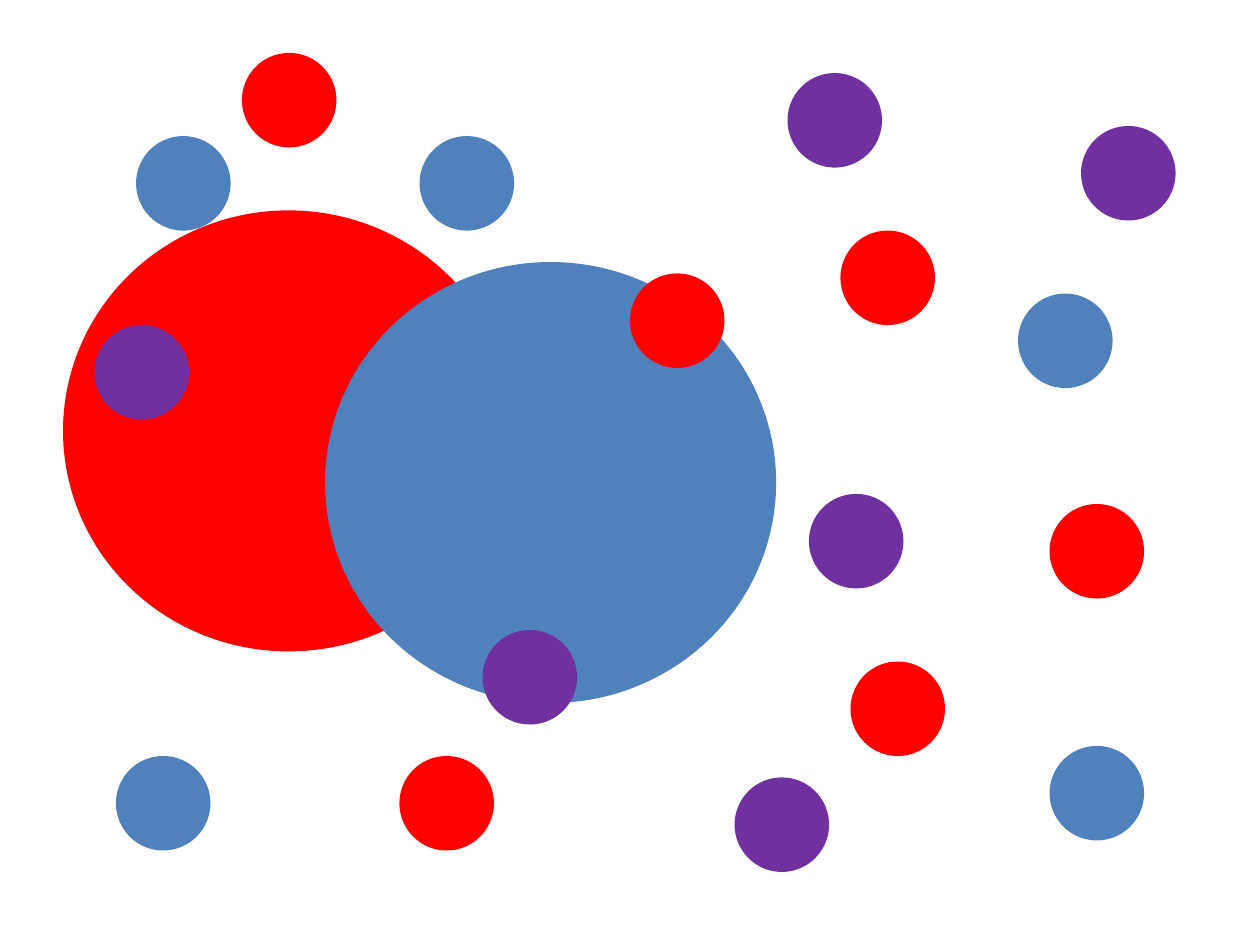
from pptx import Presentation
from pptx.dml.color import RGBColor
from pptx.enum import shapes
from pptx.util import Inches

COLORS = {"red": "FF0000", "blue": "4F81BD", "purple": "7030A0"}

LARGE_WIDTH, LARGE_HEIGHT = 3.58, 3.5
DOT_SIZE = 0.75

LARGE_CIRCLES = [("red", 0.5, 1.67), ("blue", 2.58, 2.08)]

# Colour, left, top; listed from back to front
DOTS = [
    ("blue", 8.33, 5.92),
    ("purple", 6.42, 3.92),
    ("red", 6.75, 5.25),
    ("blue", 8.08, 2.33),
    ("blue", 1.08, 1.08),
    ("blue", 3.33, 1.08),
    ("blue", 0.92, 6),
    ("purple", 8.58, 1),
    ("purple", 5.83, 6.17),
    ("purple", 6.25, 0.58),
    ("purple", 3.83, 5),
    ("purple", 0.75, 2.58),
    ("red", 8.33, 4),
    ("red", 5, 2.17),
    ("red", 6.67, 1.83),
    ("red", 3.17, 6),
    ("red", 1.92, 0.42),
]


def add_circles(slide, box_left, box_top, circles, width, height):
    """Place equally sized circles relative to the box's top left corner."""
    for color, left, top in circles:
        shape = slide.shapes.add_shape(
            shapes.MSO_SHAPE.OVAL,
            Inches(box_left + left), Inches(box_top + top),
            Inches(width), Inches(height),
        )
        shape.shadow.inherit = False
        shape.fill.solid()
        shape.fill.fore_color.rgb = RGBColor.from_string(COLORS[color])
        shape.line.fill.background()


def main():
    presentation = Presentation()
    presentation.slide_width = Inches(10)
    presentation.slide_height = Inches(7.5)
    slide = presentation.slides.add_slide(presentation.slide_layouts[6])
    add_circles(slide, 0, 0, LARGE_CIRCLES, LARGE_WIDTH, LARGE_HEIGHT)
    add_circles(slide, 0, 0, DOTS, DOT_SIZE, DOT_SIZE)
    presentation.save("out.pptx")


if __name__ == "__main__":
    main()
